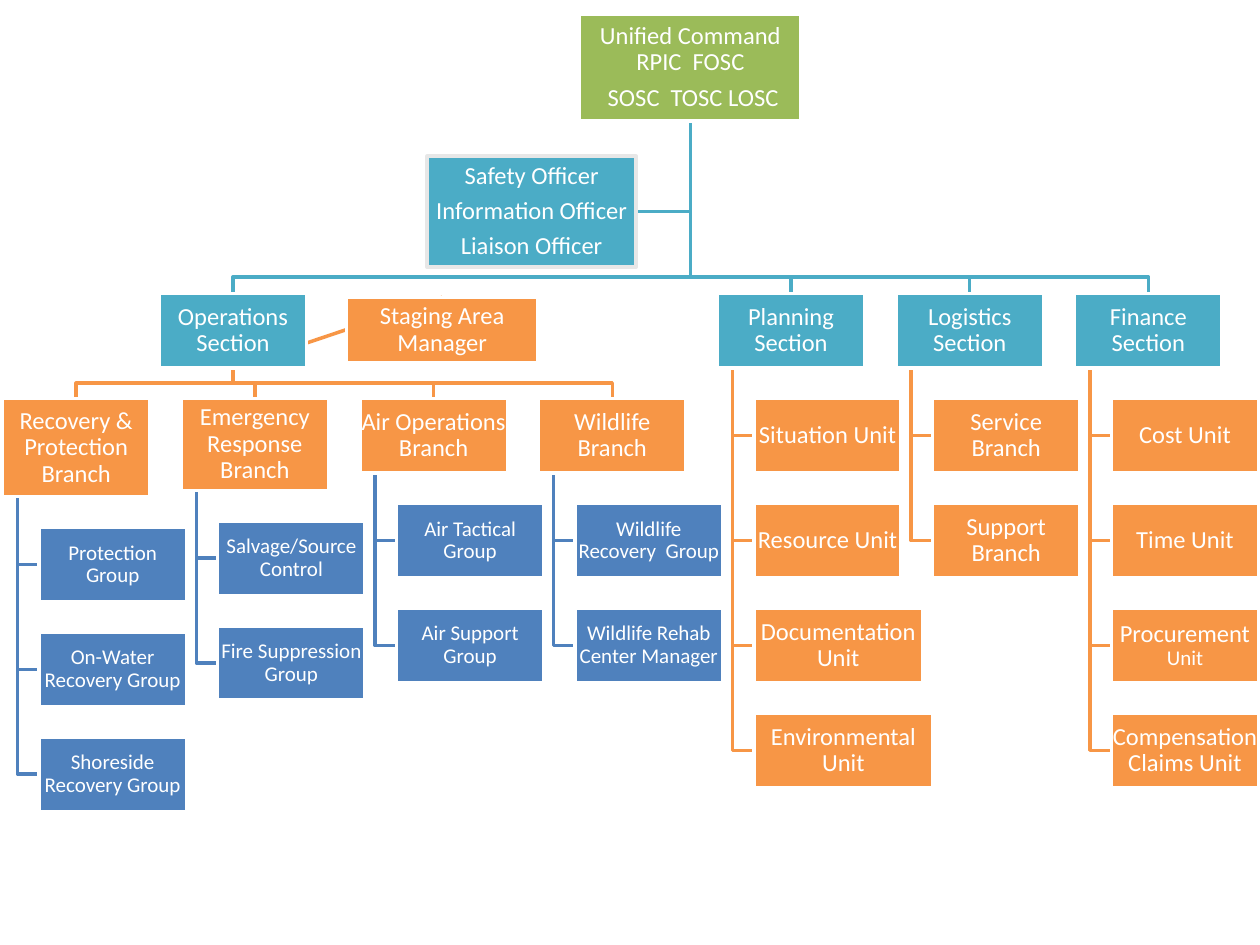
import pptx
import pptx.dml.color
import pptx.enum.shapes
import pptx.enum.text
import pptx.util

RGB = pptx.dml.color.RGBColor
GREEN = RGB(0x9B, 0xBB, 0x59)
TEAL = RGB(0x4B, 0xAC, 0xC6)
ORANGE = RGB(0xF7, 0x96, 0x46)
BLUE = RGB(0x4F, 0x81, 0xBD)
WHITE = RGB(0xFF, 0xFF, 0xFF)
GREY = RGB(0xE7, 0xE7, 0xE7)
Inches, Pt = pptx.util.Inches, pptx.util.Pt

# Grid in inches: seven columns, rows from the section level down
LEFT, COL = 0.02, (8.53 - 0.02) / 6
TOP, ROW = 2.33, (5.66 - 2.33) / 4
W, H = 1.17, 0.59
GAP = ROW - H
INDENT, SPINE = 0.29, 0.12  # child box and vertical line, from the head's left
BUS = 2.2                   # line above the sections

FRAME = dict(word_wrap=True, vertical_anchor=pptx.enum.text.MSO_ANCHOR.MIDDLE,
             margin_left=Inches(0.01), margin_right=Inches(0.01),
             margin_top=Inches(0.01), margin_bottom=Inches(0.01))
PARA = dict(alignment=pptx.enum.text.PP_ALIGN.CENTER, line_spacing=0.9,
            space_before=Pt(0), space_after=Pt(5))

prs = pptx.Presentation()
prs.slide_width, prs.slide_height = Inches(10), Inches(7.5)
s = prs.slides.add_slide(prs.slide_layouts[6])


def line(color, *points):
    pts = [(Inches(x), Inches(y)) for x, y in points]
    fb = s.shapes.build_freeform(*pts[0])
    fb.add_line_segments(pts[1:], close=False)
    sp = fb.convert_to_shape()
    sp.shadow.inherit = False
    sp.fill.background()
    sp.line.color.rgb, sp.line.width = color, Pt(2)


def box(text, x, y, w, h, color, size=14, border=WHITE):
    """Each newline starts a paragraph; a run after "|" is set at 12 pt."""
    sp = s.shapes.add_shape(pptx.enum.shapes.MSO_SHAPE.RECTANGLE,
                            Inches(x), Inches(y), Inches(w), Inches(h))
    sp.shadow.inherit = False
    sp.fill.solid()
    sp.fill.fore_color.rgb = color
    sp.line.color.rgb, sp.line.width = border, Pt(2)
    tf = sp.text_frame
    for key, value in FRAME.items():
        setattr(tf, key, value)
    for i, words in enumerate(text.split("\n")):
        p = tf.add_paragraph() if i else tf.paragraphs[0]
        for key, value in PARA.items():
            setattr(p, key, value)
        for j, part in enumerate(words.split("|")):
            r = p.add_run()
            r.text = part
            r.font.name, r.font.size = "Calibri", Pt(12 if j else size)
            r.font.color.rgb = WHITE


# Heads with their children: column, row, height, colours, text
heads = [
    (0, 1, 0.78, ORANGE, BLUE, "Recovery & Protection Branch",
     ["Protection Group", "On-Water Recovery Group", "Shoreside Recovery Group"]),
    (1, 1, 0.73, ORANGE, BLUE, "Emergency Response Branch",
     ["Salvage/Source Control", "Fire Suppression Group"]),
    (2, 1, H, ORANGE, BLUE, "Air Operations Branch",
     ["Air Tactical Group", "Air Support Group"]),
    (3, 1, H, ORANGE, BLUE, "Wildlife Branch",
     ["Wildlife Recovery  Group", "Wildlife Rehab Center Manager"]),
    (4, 0, H, TEAL, ORANGE, "Planning Section",
     ["Situation Unit", "Resource Unit", "Documentation Unit", "Environmental Unit"]),
    (5, 0, H, TEAL, ORANGE, "Logistics Section",
     ["Service Branch", "Support Branch"]),
    (6, 0, H, TEAL, ORANGE, "Finance Section",
     ["Cost Unit", "Time Unit", "Procurement| Unit", "Compensation Claims Unit"]),
]
wide = {"Documentation Unit": 1.34, "Environmental Unit": 1.42}

# Lines from the command and from operations
command_x, command_y = 5.48, 0.96
ops_x, ops_y = 1.85, TOP + H
line(TEAL, (command_x, command_y), (command_x, 1.68), (5.05, 1.68))
line(TEAL, (command_x, command_y), (command_x, BUS), (ops_x, BUS), (ops_x, TOP))
line(ORANGE, (ops_x, ops_y), (3.51, 2.36))

# Lines to each head and down to its children
for col, row, h, color, child_color, text, children in heads:
    x, y = LEFT + col * COL, TOP + row * ROW
    start_x, start_y, bus = ((ops_x, ops_y, ops_y + GAP / 2) if row
                             else (command_x, command_y, BUS))
    mid = x + W / 2
    line(color, (start_x, start_y), (start_x, bus), (mid, bus), (mid, y))
    for i in range(len(children)):
        child_mid = y + h + GAP + i * ROW + H / 2
        line(child_color, (x + SPINE, y + h), (x + SPINE, child_mid),
             (x + INDENT, child_mid))

# Command, officers, operations and staging
box("Unified Command RPIC  FOSC\n SOSC  TOSC LOSC", 4.6, 0.11, 1.76, 0.85, GREEN)
box("Safety Officer\nInformation Officer\nLiaison Officer",
    3.39, 1.24, 1.66, 0.88, TEAL, border=GREY)
box("Operations Section", ops_x - W / 2, TOP, W, H, TEAL)
box("Staging Area Manager", 2.75, 2.36, 1.52, 0.52, ORANGE)

# Heads and children
for col, row, h, color, child_color, text, children in heads:
    x, y = LEFT + col * COL, TOP + row * ROW
    box(text, x, y, W, h, color)
    for i, child in enumerate(children):
        box(child, x + INDENT, y + h + GAP + i * ROW, wide.get(child, W), H,
            child_color, size=12 if row else 14)

prs.save("out.pptx")
